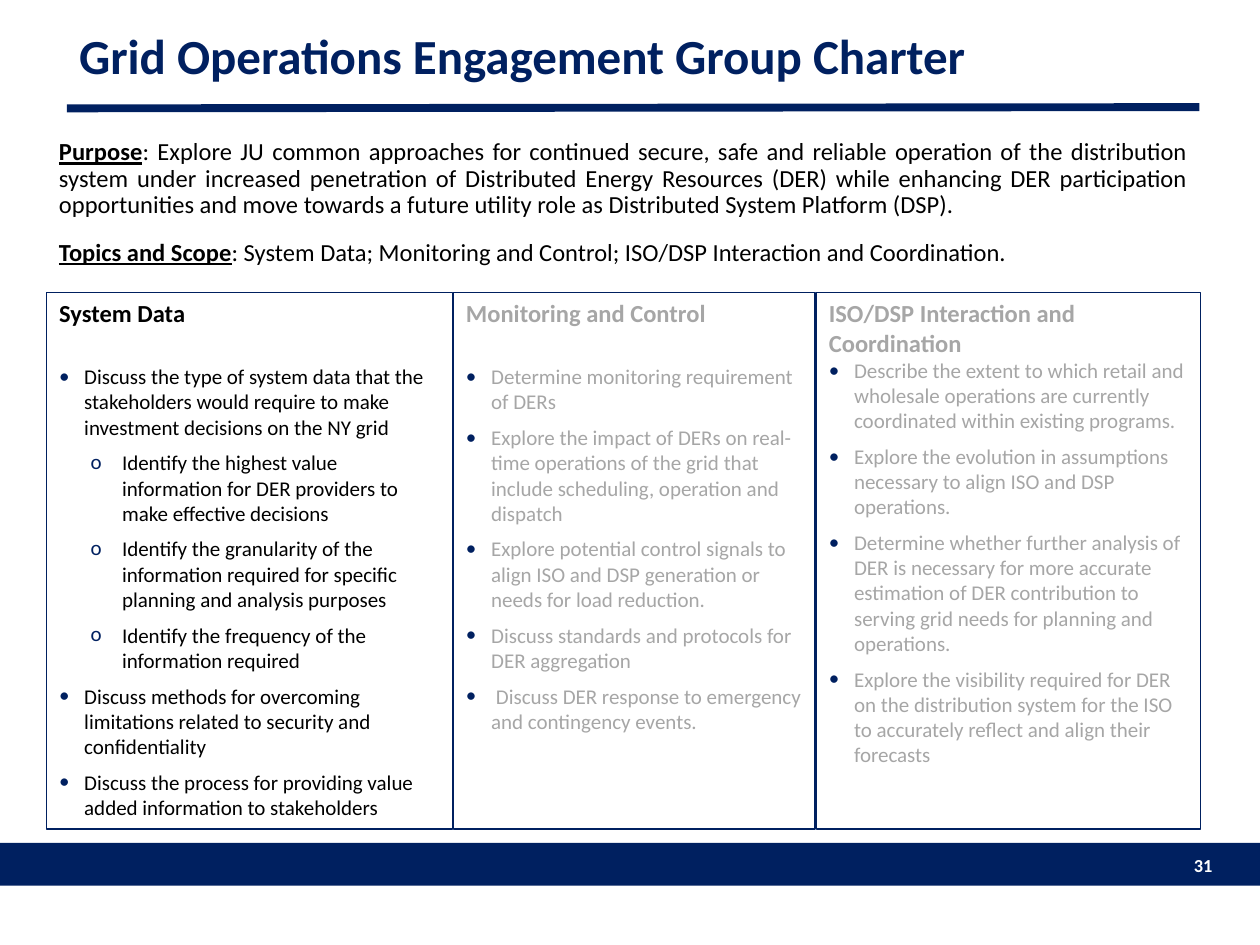
from lxml import etree
from pptx import Presentation
from pptx.dml.color import RGBColor
from pptx.enum import shapes, text
from pptx.oxml.ns import qn
from pptx.util import Inches, Pt

COLORS = {"navy": "002060", "black": "000000", "muted": "A6A6A6", "white": "FFFFFF"}
FONT = "Calibri"
ALIGN = text.PP_ALIGN
# Marker, left margin and hanging indent of each bullet level
BULLETS = [("•", 0.2, 0.2), ("o", 0.5, 0.25)]

PURPOSE = (
    ": Explore JU common approaches for continued secure, safe and reliable operation of the "
    "distribution system under increased penetration of Distributed Energy Resources (DER) while "
    "enhancing DER participation opportunities and move towards a future utility role as "
    "Distributed System Platform (DSP)."
)
TOPICS = ": System Data; Monitoring and Control; ISO/DSP Interaction and Coordination."

# Left, width, colour, heading, space after heading, (level, text) items
COLUMNS = [
    (0.37, 3.22, "black", "System Data", 20.5, [
        (0, "Discuss the type of system data that the stakeholders would require to make "
            "investment decisions on the NY grid"),
        (1, "Identify the highest value information for DER providers to make effective decisions"),
        (1, "Identify the granularity of the information required for specific planning and "
            "analysis purposes"),
        (1, "Identify the frequency of the information required"),
        (0, "Discuss methods for overcoming limitations related to security and confidentiality"),
        (0, "Discuss the process for providing value added information to stakeholders"),
    ]),
    (3.6, 2.87, "muted", "Monitoring and Control", 20.5, [
        (0, "Determine monitoring requirement of DERs"),
        (0, "Explore the impact of DERs on real-time operations of the grid that include "
            "scheduling, operation and dispatch"),
        (0, "Explore potential control signals to align ISO and DSP generation or needs for "
            "load reduction."),
        (0, "Discuss standards and protocols for DER aggregation"),
        (0, " Discuss DER response to emergency and contingency events."),
    ]),
    (6.48, 3.05, "muted", "ISO/DSP Interaction and Coordination", 0, [
        (0, "Describe the extent to which retail and wholesale operations are currently "
            "coordinated within existing programs."),
        (0, "Explore the evolution in assumptions necessary to align ISO and DSP operations."),
        (0, "Determine whether further analysis of DER is necessary for more accurate estimation "
            "of DER contribution to serving grid needs for planning and operations."),
        (0, "Explore the visibility required for DER on the distribution system for the ISO to "
            "accurately reflect and align their forecasts"),
    ]),
]


def color(name):
    return RGBColor.from_string(COLORS[name])


def add_run(p, content, size=12, fill="black", bold=False, underline=False):
    r = p.add_run()
    r.text = content
    f = r.font
    f.name, f.size, f.bold, f.underline = FONT, Pt(size), bold, underline
    f.color.rgb = color(fill)


def add_text(tf, content, align=ALIGN.LEFT, after=0, spacing=1.0, level=None, **fmt):
    """Add a paragraph, using the first one while it is still empty."""
    p = tf.paragraphs[0]
    if p.runs:
        p = tf.add_paragraph()
    p.alignment, p.line_spacing = align, spacing
    p.space_before, p.space_after = Pt(0), Pt(after)
    if level is not None:
        add_bullet(p, level)
    add_run(p, content, **fmt)
    return p


def add_bullet(p, level):
    char, margin, hang = BULLETS[level]
    p.level = level
    pPr = p._p.get_or_add_pPr()
    pPr.set("marL", str(Inches(margin)))
    pPr.set("indent", str(-Inches(hang)))
    clr = etree.SubElement(pPr, qn("a:buClr"))
    etree.SubElement(clr, qn("a:srgbClr"), val=COLORS["navy"])
    etree.SubElement(pPr, qn("a:buFont"), typeface=FONT)
    etree.SubElement(pPr, qn("a:buChar"), char=char)


def add_box(s, x, y, w, h, anchor=text.MSO_ANCHOR.TOP):
    tf = s.shapes.add_textbox(Inches(x), Inches(y), Inches(w), Inches(h)).text_frame
    tf.word_wrap = True
    tf.vertical_anchor = anchor
    return tf


def add_rect(s, x, y, w, h):
    sp = s.shapes.add_shape(shapes.MSO_SHAPE.RECTANGLE,
                            Inches(x), Inches(y), Inches(w), Inches(h))
    sp.shadow.inherit = False
    return sp


def add_footer(s, x, y, w, h):
    bar = add_rect(s, x, y, w, h)
    bar.fill.solid()
    bar.fill.fore_color.rgb = color("navy")
    bar.line.fill.background()
    tf = add_box(s, x + w - 0.69, y + 0.04, 0.41, 0.29)
    add_text(tf, "31", align=ALIGN.RIGHT, size=10.5, fill="white", bold=True)


def add_title(s, x, y, w, h):
    tf = add_box(s, x, y, w, h, anchor=text.MSO_ANCHOR.MIDDLE)
    add_text(tf, "Grid Operations Engagement Group Charter",
             spacing=0.9, size=28, fill="navy", bold=True)
    rule = s.shapes.add_connector(shapes.MSO_CONNECTOR.STRAIGHT, Inches(x), Inches(y + h + 0.06),
                                  Inches(x + w), Inches(y + h + 0.05))
    rule.line.color.rgb = color("navy")
    rule.line.width = Pt(4.5)
    etree.SubElement(rule._element.spPr, qn("a:effectLst"))


def add_intro(s, x, y, w, h):
    tf = add_box(s, x, y, w, h)
    for label, content in (("Purpose", PURPOSE), ("Topics and Scope", TOPICS)):
        p = add_text(tf, label, align=ALIGN.JUSTIFY, after=12, spacing=0.9,
                     size=14, bold=True, underline=True)
        add_run(p, content, size=14)


def add_column(s, x, y, w, h, fill, heading, gap, items):
    sp = add_rect(s, x, y, w, h)
    sp.fill.background()
    sp.line.color.rgb = color("navy")
    sp.line.width = Pt(0.75)
    tf = sp.text_frame
    tf.word_wrap = True
    tf.vertical_anchor = text.MSO_ANCHOR.TOP
    add_text(tf, heading, after=gap, size=14, fill=fill, bold=True)
    for level, content in items:
        add_text(tf, content, after=6, level=level, fill=fill)


def main():
    prs = Presentation()
    prs.slide_width, prs.slide_height = Inches(10), Inches(7.5)
    s = prs.slides.add_slide(prs.slide_layouts[6])
    add_footer(s, 0, 6.69, 10, 0.34)
    add_title(s, 0.53, 0.13, 8.99, 0.67)
    add_intro(s, 0.37, 1.06, 9.16, 5.07)
    for x, w, *content in COLUMNS:
        add_column(s, x, 2.32, w, 4.26, *content)
    prs.save("out.pptx")


if __name__ == "__main__":
    main()
